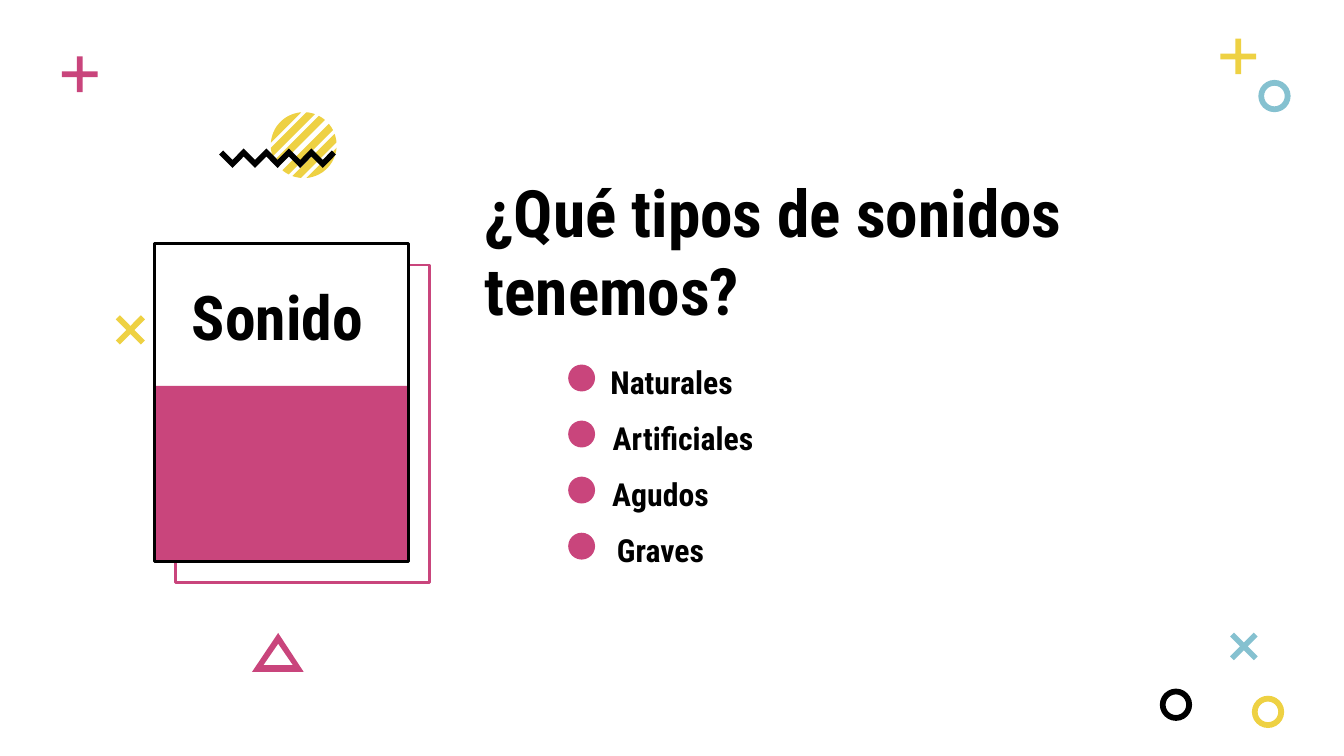
from math import acos, cos, pi, sin

from pptx import Presentation
from pptx.dml.color import RGBColor
from pptx.enum.shapes import MSO_SHAPE
from pptx.enum.text import MSO_ANCHOR, PP_ALIGN
from pptx.util import Inches, Pt

RECT, OVAL = MSO_SHAPE.RECTANGLE, MSO_SHAPE.OVAL
CROSS, DONUT = MSO_SHAPE.CROSS, MSO_SHAPE.DONUT
TOP = MSO_ANCHOR.TOP
LEFT, CENTER = PP_ALIGN.LEFT, PP_ALIGN.CENTER

THEME = {
    "font": "Roboto Condensed",
    "title": 35, "card": 33, "item": 17, "line": 1.5,
    "pink": RGBColor(0xC9, 0x45, 0x7C),
    "yellow": RGBColor(0xEE, 0xD1, 0x43),
    "blue": RGBColor(0x85, 0xC1, 0xD0),
    "black": RGBColor(0, 0, 0),
    "white": RGBColor(255, 255, 255),
}

prs = Presentation()
prs.slide_width = Inches(10)
prs.slide_height = prs.slide_width * 9 // 16
COL = prs.slide_width / 100
ROW = prs.slide_height / 56.25
s = prs.slides.add_slide(prs.slide_layouts[5])


def add_preset(kind, x, y, w, h, fill=None, line=None):
    sp = s.shapes.add_shape(kind, round(x * COL), round(y * ROW), round(w * COL), round(h * ROW))
    sp.shadow.inherit = False
    if fill:
        sp.fill.solid()
        sp.fill.fore_color.rgb = THEME[fill]
    else:
        sp.fill.background()
    if line:
        sp.line.color.rgb = THEME[line]
        sp.line.width = Pt(THEME["line"])
    else:
        sp.line.fill.background()
    return sp


def add_outline(fill, *contours):
    paths = [[(x * COL, y * ROW) for x, y in c] for c in contours]
    builder = s.shapes.build_freeform(*paths[0][0], scale=1.0)
    builder.add_line_segments(paths[0][1:])
    for path in paths[1:]:
        builder.move_to(*path[0])
        builder.add_line_segments(path[1:])
    sp = builder.convert_to_shape()
    sp.shadow.inherit = False
    sp.fill.solid()
    sp.fill.fore_color.rgb = THEME[fill]
    sp.line.fill.background()


for x, y, size, turn, color in [
    (92.13, 4.2, 2.65, 0, "yellow"),
    (92.55, 48.1, 2.5, 45, "blue"),
    (9.7, 24.55, 2.65, 45, "yellow"),
    (5.93, 5.52, 2.65, 0, "pink"),
]:
    sp = add_preset(CROSS, x - size / 2, y - size / 2, size, size, color)
    sp.adjustments[0] = 0.42
    sp.rotation = turn

for x, y, color in [(93.15, 51.77, "yellow"), (86.3, 51.24, "black"), (93.63, 5.95, "blue")]:
    sp = add_preset(DONUT, x, y, 2.4, 2.4, color)
    sp.adjustments[0] = 0.18

disc_x, disc_y, radius = 22.6, 10.8, 2.45
for side in (pi / 4, pi * 5 / 4):
    for k in range(3):
        near = 0.2 + 0.83 * k
        far = near + 0.55 if k < 2 else radius
        a, b = acos(far / radius), acos(near / radius)
        arc = [a + (b - a) * i / 12 for i in range(13)]
        angles = arc + [-t for t in reversed(arc)]
        add_outline("yellow", [(disc_x + radius * cos(t + side), disc_y + radius * sin(t + side))
                               for t in angles])

crest = [(17.3 + 0.84 * i, 11.9 if i % 2 == 0 else 11.05) for i in range(9)]
add_outline("black", [(16.6, 11.2), *crest, (24.7, 11.2), (25, 11.5),
                      *[(x, y + 0.6) for x, y in reversed(crest)], (16.3, 11.5)])

add_outline("pink", [(20.7, 47.1), (18.75, 50), (22.6, 50), (20.7, 47.1)],
            [(20.7, 47.9), (21.8, 49.5), (19.6, 49.5), (20.7, 47.9)])

add_preset(RECT, 13.04, 19.73, 18.95, 23.63, "white", "pink")
add_preset(RECT, 11.47, 18.12, 18.95, 10.6, "white")
add_preset(RECT, 11.47, 28.72, 18.95, 13.05, "pink")
add_preset(RECT, 11.47, 18.12, 18.95, 23.65, None, "black")

texts = [
    (s.shapes.title, "¿Qué tipos de sonidos tenemos?", 35.05, 11.8, 57, 14.9, "title", LEFT),
    (None, "Sonido", 13.3, 19.75, 15.3, 8.6, "card", LEFT),
]
items = [("Naturales", 36.42), ("Artificiales", 37.28), ("Agudos", 35.6), ("Graves", 35.6)]
for i, (label, x) in enumerate(items):
    y = 26 + 4.17 * i
    add_preset(OVAL, 42.28, y + 1.13, 2, 2, "pink")
    texts.append((None, label, x, y, 27.1, 4.3, "item", CENTER))

for sp, text, x, y, w, h, role, align in texts:
    sp = sp or s.shapes.add_textbox(0, 0, 0, 0)
    sp.left, sp.top, sp.width, sp.height = round(x * COL), round(y * ROW), round(w * COL), round(h * ROW)
    tf = sp.text_frame
    tf.text = text
    tf.word_wrap = True
    tf.vertical_anchor = TOP
    tf.margin_left = tf.margin_right = tf.margin_top = tf.margin_bottom = Inches(0.1)
    p = tf.paragraphs[0]
    p.alignment = align
    r = p.runs[0]
    r.font.name = THEME["font"]
    r.font.size = Pt(THEME[role])
    r.font.bold = True
    r.font.color.rgb = THEME["black"]

prs.save("out.pptx")
